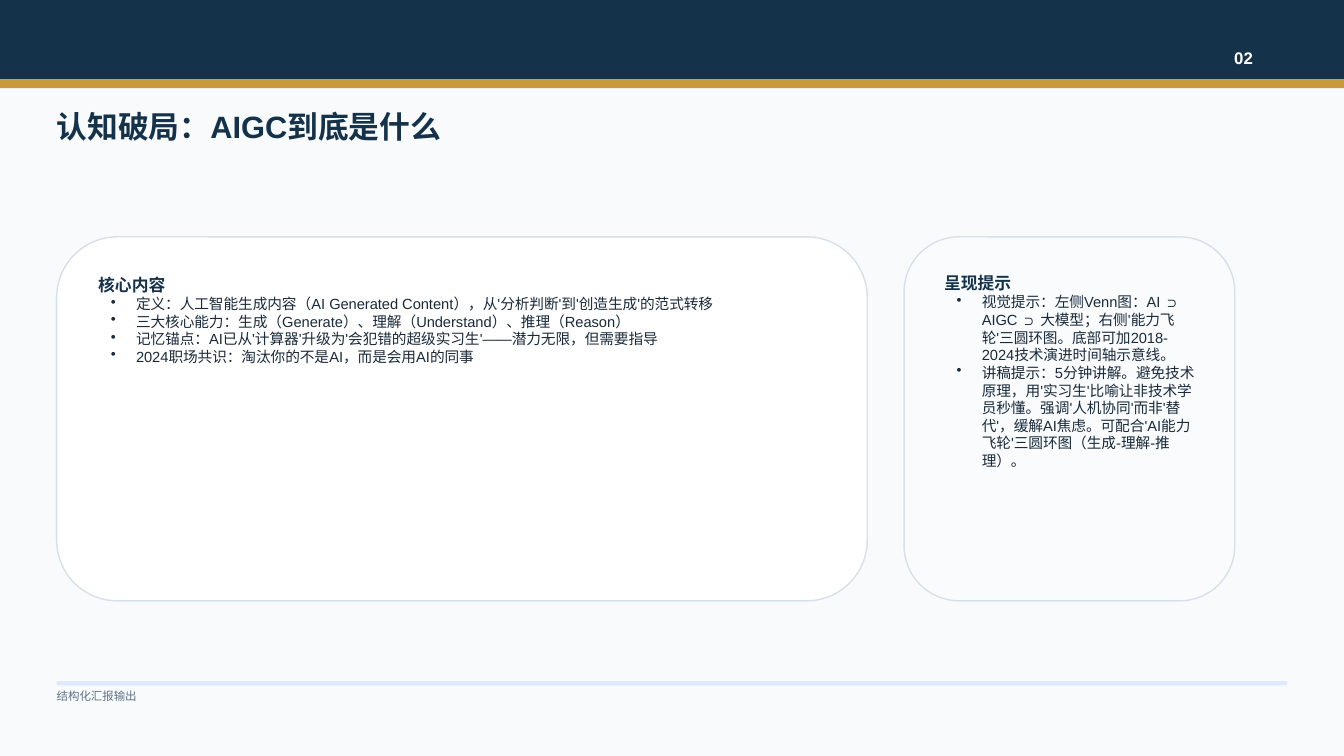
from pptx import Presentation
from pptx.dml.color import RGBColor
from pptx.enum.shapes import MSO_SHAPE
from pptx.enum.text import MSO_ANCHOR, MSO_AUTO_SIZE, PP_ALIGN
from pptx.oxml.ns import qn
from pptx.util import Pt
from lxml.etree import SubElement

NAVY = RGBColor(0x15, 0x32, 0x4B)
GOLD = RGBColor(0xC9, 0x9A, 0x3D)
WHITE = RGBColor(0xFF, 0xFF, 0xFF)
PAPER = RGBColor(0xF8, 0xFA, 0xFC)
MIST = RGBColor(0xF9, 0xFB, 0xFD)
BORDER = RGBColor(0xD7, 0xE0, 0xEA)
RULE = RGBColor(0xDC, 0xE9, 0xFF)
INK = RGBColor(0x1A, 0x2A, 0x3A)
GREY = RGBColor(0x61, 0x72, 0x84)

FONT = "Arial"
PAGE_WIDTH, PAGE_HEIGHT = 960, 540
MARGIN = 40.5
PANEL_TOP, PANEL_HEIGHT = 169.2, 260

CORE_POINTS = [
    "定义：人工智能生成内容（AI Generated Content），从'分析判断'到'创造生成'的范式转移",
    "三大核心能力：生成（Generate）、理解（Understand）、推理（Reason）",
    "记忆锚点：AI已从'计算器'升级为'会犯错的超级实习生'——潜力无限，但需要指导",
    "2024职场共识：淘汰你的不是AI，而是会用AI的同事",
]
DELIVERY_TIPS = [
    "视觉提示：左侧Venn图：AI ⊃ AIGC ⊃ 大模型；右侧'能力飞轮'三圆环图。"
    "底部可加2018-2024技术演进时间轴示意线。",
    "讲稿提示：5分钟讲解。避免技术原理，用'实习生'比喻让非技术学员秒懂。"
    "强调'人机协同'而非'替代'，缓解AI焦虑。可配合'AI能力飞轮'三圆环图（生成-理解-推理）。",
]


def add_block(page, kind, left, top, width, height, fill, line=None):
    block = page.shapes.add_shape(kind, Pt(left), Pt(top), Pt(width), Pt(height))
    block.shadow.inherit = False
    block.fill.solid()
    block.fill.fore_color.rgb = fill
    if line is None:
        block.line.fill.background()
    else:
        block.line.color.rgb = line
        block.line.width = Pt(1)
    return block


def set_frame(shape, insets=(0, 0, 0, 0), anchor=MSO_ANCHOR.TOP):
    frame = shape.text_frame
    frame.word_wrap = True
    frame.auto_size = MSO_AUTO_SIZE.NONE
    frame.vertical_anchor = anchor
    (frame.margin_left, frame.margin_top,
     frame.margin_right, frame.margin_bottom) = map(Pt, insets)
    return frame


def write(para, text, size, color, bold=False, align=PP_ALIGN.LEFT):
    para.text = text
    para.alignment = align
    para.font.name = FONT
    para.font.size = Pt(size)
    para.font.bold = bold
    para.font.color.rgb = color


def add_bullet(para):
    properties = para._p.get_or_add_pPr()
    properties.set("marL", str(Pt(27)))
    properties.set("indent", str(Pt(-18)))
    SubElement(properties, qn("a:buChar")).set("char", "•")


def add_panel(page, left, width, fill, heading, points):
    panel = add_block(page, MSO_SHAPE.ROUNDED_RECTANGLE, left, PANEL_TOP,
                      width, PANEL_HEIGHT, fill, BORDER)
    frame = set_frame(panel, (17, 14.4, 16, 12))
    write(frame.paragraphs[0], heading, 12, NAVY, bold=True)
    for point in points:
        para = frame.add_paragraph()
        add_bullet(para)
        write(para, point, 10.5, INK)


def add_title(page, text):
    title = page.shapes.title
    title.left, title.top = Pt(MARGIN), Pt(77)
    title.width, title.height = Pt(700.5), Pt(70.5)
    write(set_frame(title).paragraphs[0], text, 22, NAVY, bold=True)


def main():
    deck = Presentation()
    deck.slide_width, deck.slide_height = Pt(PAGE_WIDTH), Pt(PAGE_HEIGHT)
    page = deck.slides.add_slide(deck.slide_layouts[5])
    page.background.fill.solid()
    page.background.fill.fore_color.rgb = PAPER

    # Header band with page number
    add_block(page, MSO_SHAPE.RECTANGLE, 0, 0, PAGE_WIDTH, 56.7, NAVY)
    add_block(page, MSO_SHAPE.RECTANGLE, 0, 56.7, PAGE_WIDTH, 6.3, GOLD)
    number = add_block(page, MSO_SHAPE.ROUNDED_RECTANGLE, 867, 28, 42.5, 25, NAVY)
    frame = set_frame(number, (2, 3, 2, 2), MSO_ANCHOR.MIDDLE)
    write(frame.paragraphs[0], "02", 12, WHITE, bold=True, align=PP_ALIGN.CENTER)

    add_title(page, "认知破局：AIGC到底是什么")

    # Content panels
    add_panel(page, MARGIN, 579, WHITE, "核心内容", CORE_POINTS)
    add_panel(page, 645.8, 236.2, MIST, "呈现提示", DELIVERY_TIPS)

    # Footer
    add_block(page, MSO_SHAPE.ROUNDED_RECTANGLE, MARGIN, 486.5,
              PAGE_WIDTH - 2 * MARGIN, 3, RULE)
    footer = page.shapes.add_textbox(Pt(MARGIN), Pt(492.5), Pt(173.5), Pt(14.4))
    write(set_frame(footer).paragraphs[0], "结构化汇报输出", 8.2, GREY)

    deck.save("out.pptx")


if __name__ == "__main__":
    main()
